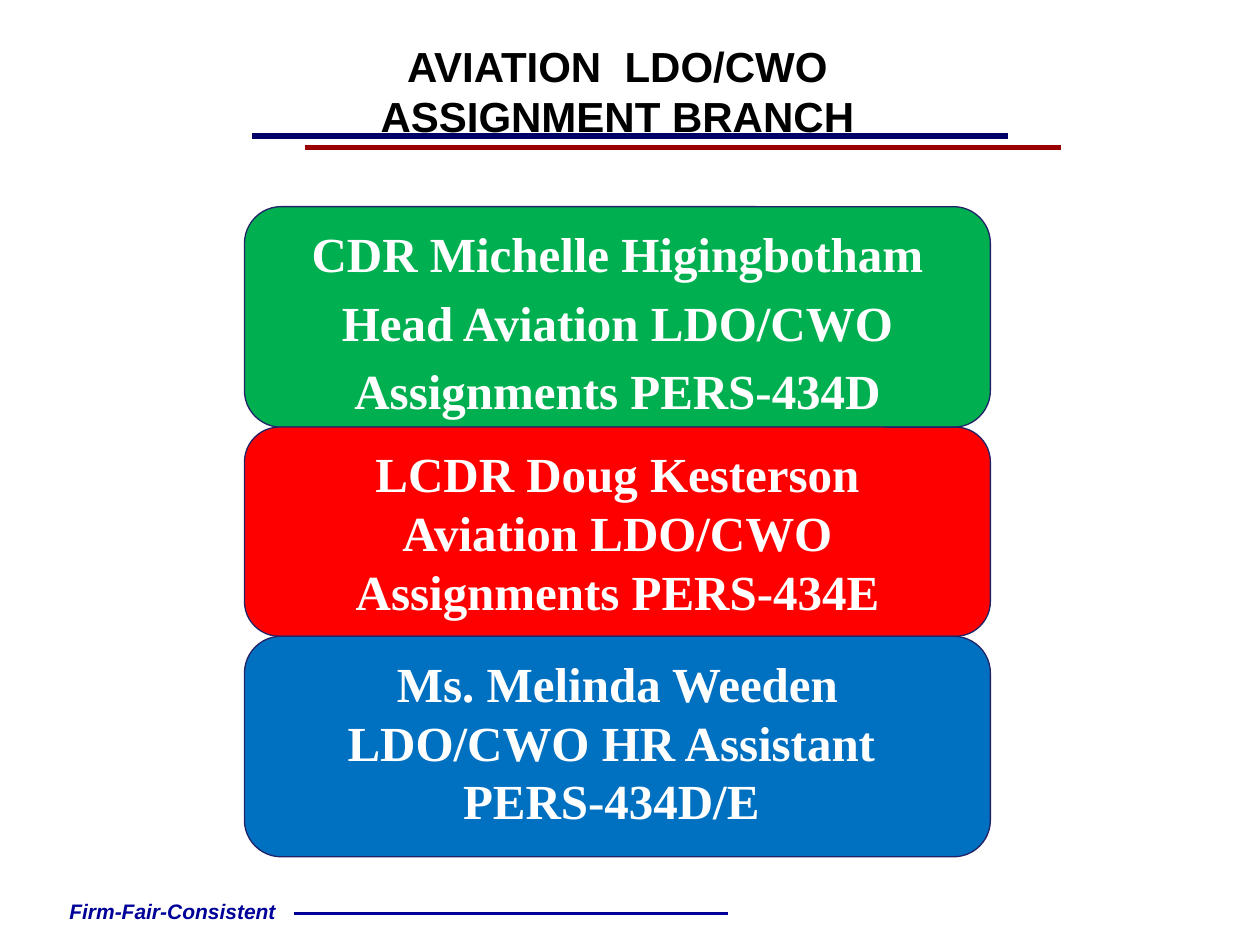
"""Build the aviation assignment branch contact slide."""
from lxml.etree import SubElement
from pptx import Presentation
from pptx.dml.color import RGBColor
from pptx.enum.shapes import MSO_CONNECTOR, MSO_SHAPE
from pptx.enum.text import MSO_ANCHOR, MSO_AUTO_SIZE, PP_ALIGN
from pptx.oxml.ns import qn
from pptx.util import Inches, Pt

COLORS = {"ink": "000000", "white": "FFFFFF", "edge": "222267",
          "navy": "000066", "maroon": "990000", "blue": "000099",
          "head": "00B050", "detailer": "FF0000", "assistant": "0070C0"}
FORMATS = {"title": {"name": "Arial", "size": Pt(24), "bold": True, "italic": False},
           "card": {"name": "Times New Roman", "size": Pt(28), "bold": True, "italic": False},
           "motto": {"name": "Arial", "size": Pt(12), "bold": True, "italic": True}}
COLUMNS, ROWS = 100, 75
CARD_LEFT, CARD_WIDTH = 19.4, 59.2


class SlideBuilder:
    """Hold the style and the current slide, placing elements on a grid."""

    def __init__(self, deck):
        self.page = deck.slides.add_slide(deck.slide_layouts[1])
        self.column = deck.slide_width / COLUMNS
        self.row = deck.slide_height / ROWS

    def area(self, left, top, width, height):
        """Turn grid cells into slide lengths."""
        return (int(left * self.column), int(top * self.row),
                int(width * self.column), int(height * self.row))

    def move(self, shape, area):
        """Place a shape on the grid."""
        for name, value in zip(("left", "top", "width", "height"), self.area(*area)):
            setattr(shape, name, value)

    def fill_text(self, shape, lines, style, color, anchor, gap=0):
        """Fill a shape with centred, unbulleted paragraphs."""
        frame = shape.text_frame
        frame.word_wrap = True
        frame.auto_size = MSO_AUTO_SIZE.NONE
        frame.vertical_anchor = anchor
        for index, line in enumerate(lines):
            para = frame.add_paragraph() if index else frame.paragraphs[0]
            para.text = line
            properties = para._p.get_or_add_pPr()
            properties.set("marL", "0")
            properties.set("indent", "0")
            SubElement(properties, qn("a:buNone"))
            para.alignment = PP_ALIGN.CENTER
            para.space_before = Pt(gap if index else 0)
            for span in para.runs:
                for name, value in FORMATS[style].items():
                    setattr(span.font, name, value)
                span.font.color.rgb = RGBColor.from_string(COLORS[color])

    def title(self, text, area):
        """Move and fill the title placeholder."""
        box = self.page.shapes.title
        self.move(box, area)
        self.fill_text(box, [text], "title", "ink", MSO_ANCHOR.MIDDLE)

    def rule(self, left, top, width, color, weight):
        """Draw a horizontal line."""
        x, y, length, _ = self.area(left, top, width, 0)
        line = self.page.shapes.add_connector(MSO_CONNECTOR.STRAIGHT, x, y, x + length, y)
        line.line.color.rgb = RGBColor.from_string(COLORS[color])
        line.line.width = Pt(weight)
        SubElement(line._element.spPr, qn("a:effectLst"))

    def motto(self, text, area):
        """Add the footer motto."""
        box = self.page.shapes.add_textbox(*self.area(*area))
        for side in ("left", "top", "right", "bottom"):
            setattr(box.text_frame, f"margin_{side}", 0)
        self.fill_text(box, [text], "motto", "blue", MSO_ANCHOR.MIDDLE)

    def paint(self, box, fill):
        """Give a card its fill and outline."""
        box.fill.solid()
        box.fill.fore_color.rgb = RGBColor.from_string(COLORS[fill])
        box.line.color.rgb = RGBColor.from_string(COLORS["edge"])
        box.line.width = Pt(0.75)

    def body_card(self, lines, area, fill):
        """Turn the body placeholder into a rounded card."""
        box = self.page.placeholders[1]
        self.move(box, area)
        outline = SubElement(box._element.spPr, qn("a:prstGeom"), prst="roundRect")
        SubElement(outline, qn("a:avLst"))
        self.paint(box, fill)
        self.fill_text(box, lines, "card", "white", MSO_ANCHOR.TOP, gap=5.6)

    def card(self, lines, area, fill):
        """Add a rounded card."""
        box = self.page.shapes.add_shape(MSO_SHAPE.ROUNDED_RECTANGLE, *self.area(*area))
        box.shadow.inherit = False
        self.paint(box, fill)
        self.fill_text(box, lines, "card", "white", MSO_ANCHOR.TOP)


def main():
    """Build and save the deck."""
    deck = Presentation()
    deck.slide_width, deck.slide_height = Inches(10), Inches(7.5)
    page = SlideBuilder(deck)
    page.rule(20, 10.8, 60, "navy", 3)
    page.rule(24.2, 11.7, 60, "maroon", 3)
    page.rule(23.3, 72.5, 34.5, "blue", 2.25)
    page.motto("Firm-Fair-Consistent", (3.3, 70.8, 20.8, 3))
    page.title("AVIATION  LDO/CWO\vASSIGNMENT BRANCH", (4, 2.6, 90, 9.2))
    cards = [
        (page.body_card, "head", 17.5,
         ["CDR Michelle Higingbotham", "Head Aviation LDO/CWO", "Assignments PERS-434D"]),
        (page.card, "detailer", 16.6,
         ["LCDR Doug Kesterson", "Aviation LDO/CWO", "Assignments PERS-434E"]),
        (page.card, "assistant", 17.5,
         ["Ms. Melinda Weeden", "LDO/CWO HR Assistant ", "PERS-434D/E "]),
    ]
    top = 16.4
    for draw, fill, height, lines in cards:
        draw(lines, (CARD_LEFT, top, CARD_WIDTH, height), fill)
        top += height
    deck.save("out.pptx")


if __name__ == "__main__":
    main()
